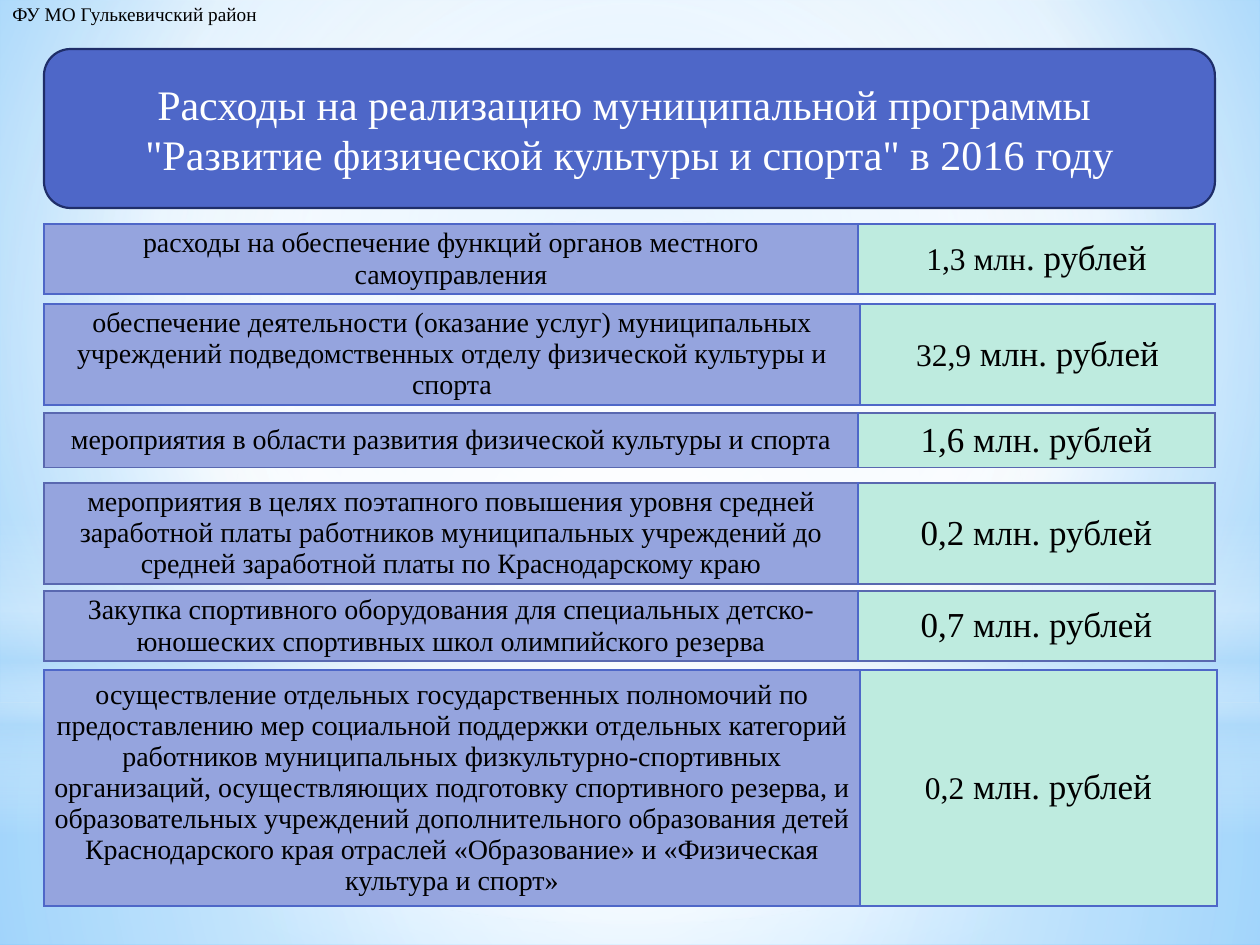
from lxml import etree
from pptx import Presentation
from pptx import util as u
from pptx.dml import color
from pptx.enum import shapes, text
from pptx.oxml import ns

PX = 914400 / 126
A = ns.nsdecls("a")
FONT = "Times New Roman"
BLUE, SLATE, LILAC, MINT = "4E67C8", "5968B0", "95A4DE", "BEEBDF"
rgb = color.RGBColor.from_string


def put(p, t, size=16, col="000000", align=text.PP_ALIGN.CENTER):
    p.alignment = align
    r = p.add_run()
    r.text = t
    r.font.name = FONT
    r.font.size = u.Pt(size)
    r.font.color.rgb = rgb(col)


def gradient(props, stops, way):
    gs = "".join(
        f'<a:gs pos="{pos * 1000}"><a:srgbClr val="{col}">'
        f'<a:alpha val="{alpha * 1000}"/></a:srgbClr></a:gs>'
        for pos, col, alpha in stops)
    if way:
        l, t, r, b = [v * 1000 for v in way]
        kind = (f'<a:path path="circle"><a:fillToRect l="{l}" t="{t}" '
                f'r="{r}" b="{b}"/></a:path>')
    else:
        kind = '<a:lin ang="5400000" scaled="0"/>'
    fill = etree.fromstring(
        f'<a:gradFill {A} rotWithShape="1"><a:gsLst>{gs}</a:gsLst>{kind}</a:gradFill>')
    props.replace(props.find(ns.qn("a:solidFill")), fill)


prs = Presentation()
prs.slide_width, prs.slide_height = u.Inches(10), u.Inches(7.5)
s = prs.slides.add_slide(prs.slide_layouts[6])

s.background.fill.solid()
gradient(s.element.find(".//" + ns.qn("p:bgPr")),
         [(0, "9ED5FF", 100), (60, "FFFFFF", 100), (100, "5BB9FF", 100)],
         (20, 10, 20, 60))

RECT, OVAL = shapes.MSO_SHAPE.RECTANGLE, shapes.MSO_SHAPE.OVAL
MID = (50, 50, 50, 50)
glows = [
    (RECT, 703, 242, MID, [(0, "FFFFFF", 91), (37, "FFFFFF", 76), (100, "B4DCFA", 79)]),
    (RECT, 0, 703, MID, [(0, "FFFFFF", 89), (48, "FFFFFF", 62), (100, "B4DCFA", 79)]),
    (RECT, 519, 315, None, [(0, "FFFFFF", 0), (29, "FFFFFF", 30), (45, "B4DCFA", 40),
                            (55, "FFFFFF", 26), (65, "B4DCFA", 60), (100, "FFFFFF", 0)]),
    (OVAL, 221, 703, MID, [(0, "FFFFFF", 100), (56, "FFFFFF", 0)]),
]
for kind, y, h, way, stops in glows:
    sp = s.shapes.add_shape(kind, 0, u.Emu(int(y * PX)), prs.slide_width, u.Emu(int(h * PX)))
    sp.shadow.inherit = False
    sp.line.fill.background()
    sp.fill.solid()
    gradient(sp.element.spPr, stops, way)

box = [u.Emu(int(v * PX)) for v in (0, -4, 275, 36)]
tf = s.shapes.add_textbox(*box).text_frame
tf.word_wrap = False
tf.auto_size = text.MSO_AUTO_SIZE.SHAPE_TO_FIT_TEXT
put(tf.paragraphs[0], "ФУ МО Гулькевичский район", 11, align=text.PP_ALIGN.LEFT)

box = [u.Emu(int(v * PX)) for v in (44, 49, 1171, 159)]
sp = s.shapes.add_shape(shapes.MSO_SHAPE.ROUNDED_RECTANGLE, *box)
sp.shadow.inherit = False
sp.fill.solid()
sp.fill.fore_color.rgb = rgb(BLUE)
sp.line.color.rgb = rgb("1F2E69")
sp.line.width = u.Pt(1.25)
tf = sp.text_frame
tf.vertical_anchor = text.MSO_ANCHOR.MIDDLE
put(tf.paragraphs[0], "Расходы на реализацию муниципальной программы ", 24, "FFFFFF")
put(tf.add_paragraph(), '"Развитие физической культуры и спорта" в 2016 году', 24, "FFFFFF")

rows = [
    (224, 70, 814, 357, BLUE,
     "расходы на обеспечение функций органов местного самоуправления",
     [("1,3 млн", 18), (". рублей", 20)]),
    (304, 100, 816, 355, BLUE,
     "обеспечение деятельности (оказание услуг) муниципальных учреждений "
     "подведомственных отделу физической культуры и спорта",
     [("32,9", 18), (" млн. рублей", 20)]),
    (413, 54, 814, 357, SLATE,
     "мероприятия в области развития физической культуры и спорта",
     [("1,6 млн. рублей", 20)]),
    (483, 100, 814, 357, SLATE,
     "мероприятия в целях поэтапного повышения уровня средней заработной платы "
     "работников муниципальных учреждений до средней заработной платы по "
     "Краснодарскому краю",
     [("0,2 млн. рублей", 20)]),
    (591, 70, 814, 357, SLATE,
     "Закупка спортивного оборудования для специальных детско-юношеских "
     "спортивных школ олимпийского резерва",
     [("0,7 млн. рублей", 20)]),
    (670, 236, 816, 357, BLUE,
     "осуществление отдельных государственных полномочий по предоставлению мер "
     "социальной поддержки отдельных категорий работников муниципальных "
     "физкультурно-спортивных организаций, осуществляющих подготовку спортивного "
     "резерва, и образовательных учреждений дополнительного образования детей "
     "Краснодарского края отраслей «Образование» и «Физическая культура и спорт»",
     [("0,2", 18), (" млн. рублей", 20)]),
]
for y, h, w1, w2, edge, name, amount in rows:
    box = [u.Emu(int(v * PX)) for v in (44, y, w1 + w2, h)]
    tbl = s.shapes.add_table(1, 2, *box).table
    tbl.first_row = tbl.horz_banding = False
    cells = [(w1, LILAC, [(name, 16)], (edge, BLUE, edge, edge)),
             (w2, MINT, amount, (BLUE, edge, edge, edge))]
    for i, (w, fill, runs, borders) in enumerate(cells):
        tbl.columns[i].width = u.Emu(int(w * PX))
        cell = tbl.cell(0, i)
        cell.vertical_anchor = text.MSO_ANCHOR.MIDDLE
        cell.fill.solid()
        cell.fill.fore_color.rgb = rgb(fill)
        if i == 0:
            cell.margin_left = cell.margin_right = u.Emu(int(5 * PX))
            cell.margin_top = cell.margin_bottom = 0
        for t, size in runs:
            put(cell.text_frame.paragraphs[0], t, size)
        for n, (side, col) in enumerate(zip("LRTB", borders)):
            cell._tc.tcPr.insert(n, etree.fromstring(
                f'<a:ln{side} {A} w="12700"><a:solidFill><a:srgbClr val="{col}"/>'
                f'</a:solidFill></a:ln{side}>'))

prs.save("out.pptx")
